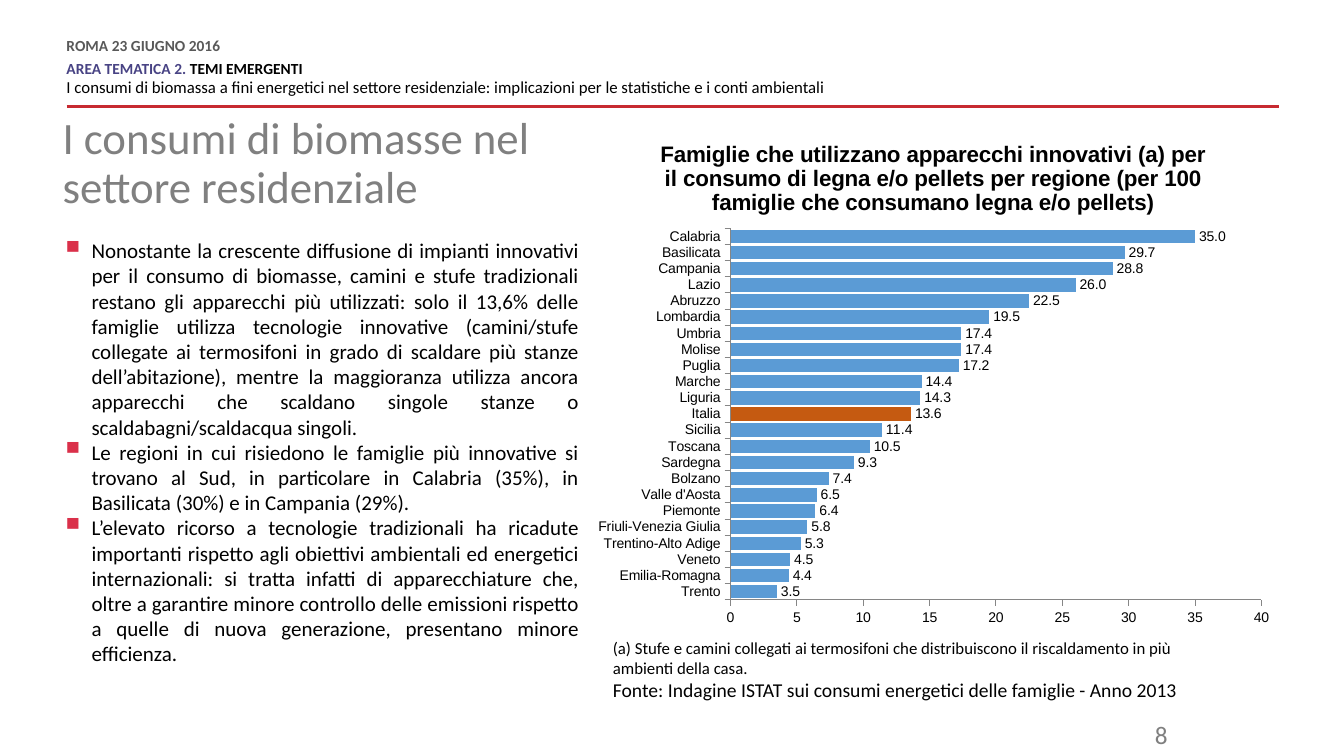
"""Build the slide on household biomass consumption, with regional bar chart."""
import lxml.etree
import pptx
import pptx.chart.data
import pptx.dml.color
import pptx.enum.chart
import pptx.enum.shapes
import pptx.enum.text
import pptx.oxml
import pptx.oxml.ns
import pptx.util

PIXEL = 9144
THEME = {
    "text_font": "Calibri", "chart_font": "Arial",
    "black": "000000", "date": "595959", "area": "484384", "title": "808080",
    "number": "7F7F7F", "rule": "C72A31", "bullet": "DA304A",
    "bar": "5B9BD5", "italy": "C55A11", "axis": "868686",
    "title_size": 32, "body_size": 15, "date_size": 11, "header_size": 12,
    "note_size": 12, "source_size": 14, "number_size": 18,
    "chart_size": 10, "chart_title_size": 16,
}
BODY = [
    "Nonostante la crescente diffusione di impianti innovativi per il consumo di biomasse, "
    "camini e stufe tradizionali restano gli apparecchi più utilizzati: solo il 13,6% delle "
    "famiglie utilizza tecnologie innovative (camini/stufe collegate ai termosifoni in grado "
    "di scaldare più stanze dell’abitazione), mentre la maggioranza utilizza ancora "
    "apparecchi che scaldano singole stanze o scaldabagni/scaldacqua singoli.",
    "Le regioni in cui risiedono le famiglie più innovative si trovano al Sud, in particolare "
    "in Calabria (35%), in Basilicata (30%) e in Campania (29%).",
    "L’elevato ricorso a tecnologie tradizionali ha ricadute importanti rispetto agli "
    "obiettivi ambientali ed energetici internazionali: si tratta infatti di apparecchiature "
    "che, oltre a garantire minore controllo delle emissioni rispetto a quelle di nuova "
    "generazione, presentano minore efficienza.",
]
NOTES = [
    ("(a) Stufe e camini collegati ai termosifoni che distribuiscono il riscaldamento in più "
     "ambienti della casa.", "note_size"),
    ("Fonte: Indagine ISTAT sui consumi energetici delle famiglie - Anno 2013", "source_size"),
]
REGIONS = {
    "Trento": 3.5, "Emilia-Romagna": 4.4, "Veneto": 4.5, "Trentino-Alto Adige": 5.3,
    "Friuli-Venezia Giulia": 5.8, "Piemonte": 6.4, "Valle d'Aosta": 6.5, "Bolzano": 7.4,
    "Sardegna": 9.3, "Toscana": 10.5, "Sicilia": 11.4, "Italia": 13.6, "Liguria": 14.3,
    "Marche": 14.4, "Puglia": 17.2, "Molise": 17.4, "Umbria": 17.4, "Lombardia": 17.4 + 2.1,
    "Abruzzo": 22.5, "Lazio": 26, "Campania": 28.8, "Basilicata": 29.7, "Calabria": 35,
}
REGIONS["Lombardia"] = 19.5


def set_font(font, color, size, bold=False, name="text_font"):
    """Apply theme font, colour and size."""
    font.name = THEME[name]
    font.size = pptx.util.Pt(THEME[size])
    font.bold = bold
    font.color.rgb = pptx.dml.color.RGBColor.from_string(THEME[color])


def add_text_frame(left, top, width, height):
    """Add a wrapping text box that grows with its text."""
    box = slide.shapes.add_textbox(*(PIXEL * length for length in (left, top, width, height)))
    box.text_frame.word_wrap = True
    box.text_frame.auto_size = pptx.enum.text.MSO_AUTO_SIZE.SHAPE_TO_FIT_TEXT
    return box.text_frame


presentation = pptx.Presentation()
presentation.slide_width = 1333 * PIXEL
presentation.slide_height = 750 * PIXEL
slide = presentation.slides.add_slide(presentation.slide_layouts[5])

rule = slide.shapes.add_connector(
    pptx.enum.shapes.MSO_CONNECTOR.STRAIGHT,
    66 * PIXEL, 106 * PIXEL, 1269 * PIXEL, 106 * PIXEL)
rule.line.color.rgb = pptx.dml.color.RGBColor.from_string(THEME["rule"])
rule.line.width = pptx.util.Pt(2)
lxml.etree.SubElement(rule._element.spPr, pptx.oxml.ns.qn("a:effectLst"))

title = slide.shapes.title
title.left, title.top, title.width, title.height = (
    PIXEL * length for length in (62, 115, 471, 113))
title.text_frame.text = "I consumi di biomasse nel settore residenziale"
title.text_frame.auto_size = pptx.enum.text.MSO_AUTO_SIZE.NONE
title.text_frame.vertical_anchor = pptx.enum.text.MSO_ANCHOR.TOP
title_paragraph = title.text_frame.paragraphs[0]
title_paragraph.alignment = pptx.enum.text.PP_ALIGN.LEFT
title_paragraph.line_spacing = 0.9
set_font(title_paragraph.font, "title", "title_size")

header = add_text_frame(66, 39, 834, 59)
for frame in (header, title.text_frame):
    frame.margin_left = frame.margin_top = frame.margin_right = frame.margin_bottom = 0
date, area, subject = header.paragraphs[0], header.add_paragraph(), header.add_paragraph()
for paragraph in header.paragraphs:
    paragraph.line_spacing = pptx.util.Pt(10.8)
date.text = "ROMA 23 GIUGNO 2016"
date.space_after = pptx.util.Pt(6)
set_font(date.font, "date", "date_size", bold=True)
for text, color in (("AREA TEMATICA 2. ", "area"), ("TEMI EMERGENTI", "black")):
    run = area.add_run()
    run.text = text
    set_font(run.font, color, "date_size", bold=True)
subject.text = ("I consumi di biomassa a fini energetici nel settore residenziale: "
                "implicazioni per le statistiche e i conti ambientali")
subject.space_before = pptx.util.Pt(3)
subject.space_after = pptx.util.Pt(6)
set_font(subject.font, "black", "header_size")

body = add_text_frame(50, 231, 534, 439)
for index, text in enumerate(BODY):
    paragraph = body.add_paragraph() if index else body.paragraphs[0]
    paragraph.text = text
    paragraph.alignment = pptx.enum.text.PP_ALIGN.JUSTIFY
    properties = paragraph._p.get_or_add_pPr()
    properties.set("marL", str(31 * PIXEL))
    properties.set("indent", str(-31 * PIXEL))
    for bullet in (f'<a:buClr {{}}><a:srgbClr val="{THEME["bullet"]}"/></a:buClr>',
                   '<a:buSzPct {} val="160000"/>', '<a:buChar {} char="▪"/>'):
        properties.append(pptx.oxml.parse_xml(bullet.format(pptx.oxml.ns.nsdecls("a"))))
    set_font(paragraph.font, "black", "body_size")

data = pptx.chart.data.CategoryChartData(number_format="#,##0.0")
data.categories = list(REGIONS)
data.add_series("Series 1", REGIONS.values())
chart = slide.shapes.add_chart(
    pptx.enum.chart.XL_CHART_TYPE.BAR_CLUSTERED,
    579 * PIXEL, 119 * PIXEL, 693 * PIXEL, 512 * PIXEL, data).chart
set_font(chart.font, "black", "chart_size", name="chart_font")
chart.has_legend = False
chart.has_title = True
chart_title = chart.chart_title.text_frame.paragraphs[0]
chart_title.text = ("Famiglie che utilizzano apparecchi innovativi (a) per il consumo di legna "
                    "e/o pellets per regione (per 100 famiglie che consumano legna e/o pellets)")
set_font(chart_title.font, "black", "chart_title_size", bold=True, name="chart_font")

plot = chart.plots[0]
plot.gap_width = 20
plot.vary_by_categories = False
series = plot.series[0]
italy = series.points[list(REGIONS).index("Italia")]
for item, color in ((series, "bar"), (italy, "italy")):
    item.format.fill.solid()
    item.format.fill.fore_color.rgb = pptx.dml.color.RGBColor.from_string(THEME[color])
labels = series.data_labels
labels.show_value = True
labels.number_format = "#,##0.0"
labels.number_format_is_linked = False
labels.position = pptx.enum.chart.XL_LABEL_POSITION.OUTSIDE_END
set_font(labels.font, "black", "chart_size", name="chart_font")

for axis in (chart.category_axis, chart.value_axis):
    axis.has_major_gridlines = False
    axis.major_tick_mark = pptx.enum.chart.XL_TICK_MARK.OUTSIDE
    axis.minor_tick_mark = pptx.enum.chart.XL_TICK_MARK.NONE
    axis.format.line.color.rgb = pptx.dml.color.RGBColor.from_string(THEME["axis"])
chart.value_axis.minimum_scale = 0
chart.value_axis.maximum_scale = 40
chart.value_axis.major_unit = 5
chart.value_axis.tick_labels.number_format = "#,##0"
chart.value_axis.tick_labels.number_format_is_linked = False

plot_area = chart._chartSpace.chart.plotArea
for former in plot_area.findall(pptx.oxml.ns.qn("c:layout")):
    plot_area.remove(former)
plot_area.insert(0, pptx.oxml.parse_xml(
    f'<c:layout {pptx.oxml.ns.nsdecls("c")}><c:manualLayout><c:layoutTarget val="inner"/>'
    '<c:xMode val="edge"/><c:yMode val="edge"/><c:x val="0.21"/><c:y val="0.21"/>'
    '<c:w val="0.76"/><c:h val="0.72"/></c:manualLayout></c:layout>'))

notes = add_text_frame(598, 628, 625, 74)
for index, (text, size) in enumerate(NOTES):
    paragraph = notes.add_paragraph() if index else notes.paragraphs[0]
    paragraph.text = text
    set_font(paragraph.font, "black", size)

number = add_text_frame(1050, 709, 118, 35).paragraphs[0]
number.text = "8"
number.alignment = pptx.enum.text.PP_ALIGN.RIGHT
set_font(number.font, "number", "number_size")

presentation.save("out.pptx")
